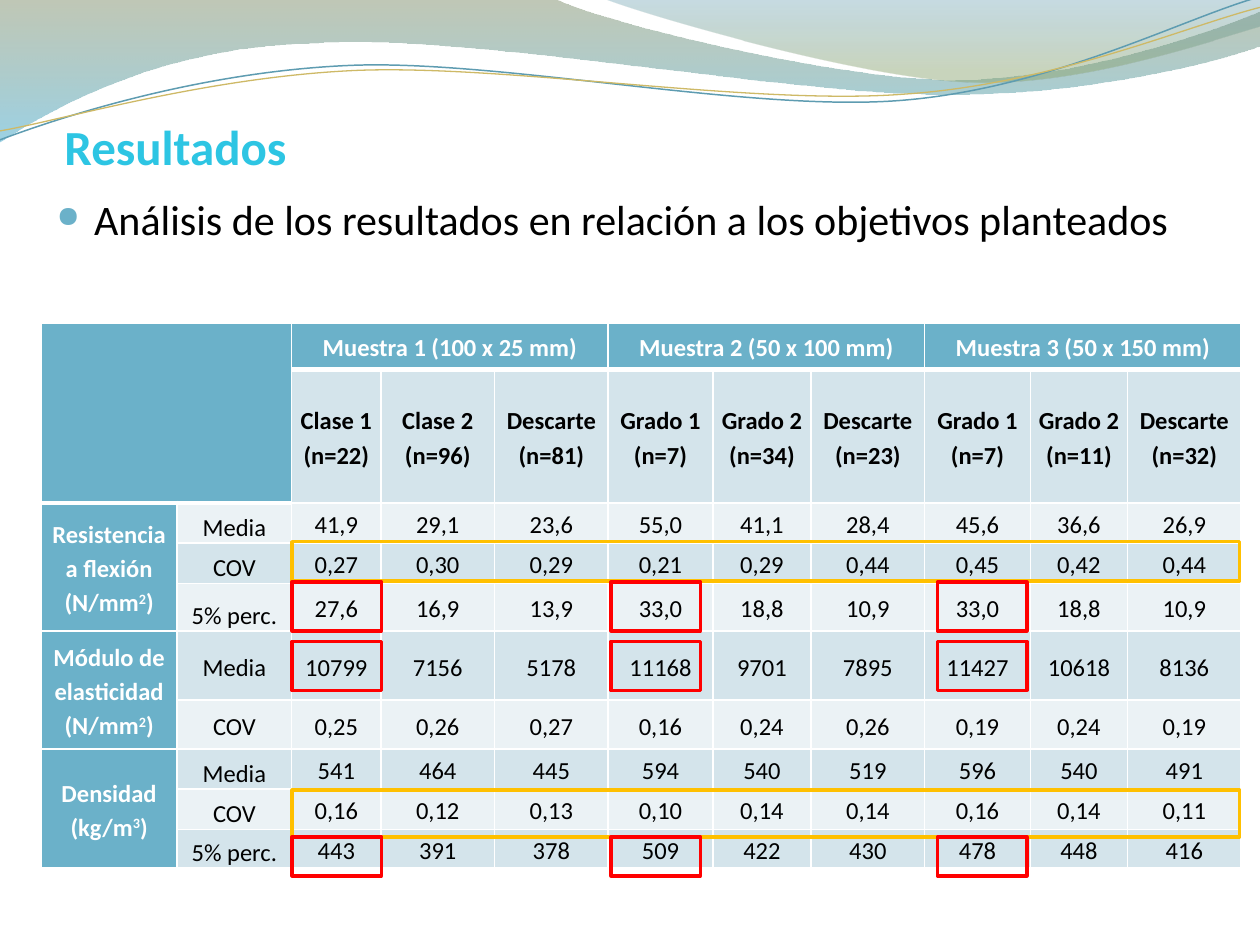
from lxml import etree
from pptx import Presentation
from pptx.dml.color import RGBColor
from pptx.enum.shapes import MSO_SHAPE
from pptx.enum.text import MSO_ANCHOR, MSO_AUTO_SIZE, PP_ALIGN
from pptx.oxml.ns import qn
from pptx.util import Cm, Pt

RECTANGLE = MSO_SHAPE.RECTANGLE
TOP, MIDDLE, BOTTOM = MSO_ANCHOR.TOP, MSO_ANCHOR.MIDDLE, MSO_ANCHOR.BOTTOM
LEFT, CENTER, JUSTIFY = PP_ALIGN.LEFT, PP_ALIGN.CENTER, PP_ALIGN.JUSTIFY
NO_AUTOFIT = MSO_AUTO_SIZE.NONE

THEME = {
    "font": "Calibri", "title_size": 28, "body_size": 24, "table_size": 14,
    "title": "2DC5E3", "text": "000000", "white": "FFFFFF", "accent": "6BB1C9",
    "band_dark": "D4E4EB", "band_light": "EBF2F5",
    "variation": "FFC000", "highlight": "FF0000",
}

# Content
TITLE = "Resultados"
BULLET = "Análisis de los resultados en relación a los objetivos planteados"
SAMPLES = [
    ("Muestra 1 (100 x 25 mm)", ["Clase 1 (n=22)", "Clase 2 (n=96)", "Descarte (n=81)"]),
    ("Muestra 2 (50 x 100 mm)", ["Grado 1 (n=7)", "Grado 2 (n=34)", "Descarte (n=23)"]),
    ("Muestra 3 (50 x 150 mm)", ["Grado 1 (n=7)", "Grado 2 (n=11)", "Descarte (n=32)"]),
]
# Property (text, exponent, text), anchor of the statistic names, statistics
PROPERTIES = [
    (("Resistencia a flexión (N/mm", "2", ")"), BOTTOM, [
        ("Media", "41,9 29,1 23,6 55,0 41,1 28,4 45,6 36,6 26,9"),
        ("COV", "0,27 0,30 0,29 0,21 0,29 0,44 0,45 0,42 0,44"),
        ("5% perc.", "27,6 16,9 13,9 33,0 18,8 10,9 33,0 18,8 10,9")]),
    (("Módulo de elasticidad (N/mm", "2", ")"), MIDDLE, [
        ("Media", "10799 7156 5178 11168 9701 7895 11427 10618 8136"),
        ("COV", "0,25 0,26 0,27 0,16 0,24 0,26 0,19 0,24 0,19")]),
    (("Densidad (kg/m", "3", ")"), BOTTOM, [
        ("Media", "541 464 445 594 540 519 596 540 491"),
        ("COV", "0,16 0,12 0,13 0,10 0,14 0,14 0,16 0,14 0,11"),
        ("5% perc.", "443 391 378 509 422 430 478 448 416")]),
]

# Measures in centimetres
TABLE_LEFT, TABLE_TOP = 0.83, 6.51
COLUMN_WIDTHS = [2.74, 2.31, 1.8, 2.29, 2.29, 2.11, 1.98, 2.29, 2.13, 1.96, 2.29]
ROW_HEIGHTS = [0.94, 2.69, 0.81, 0.81, 0.96, 1.39, 0.99, 0.81, 0.81, 0.78]
FRAME_LEFTS, FRAME_WIDTH = [5.89, 12.32, 18.9], 1.8
FRAME_ROWS = [(11.73, 0.99), (12.93, 0.99), (16.87, 0.79)]
VARIATION_ROWS = [(15.93, 0.94), (10.92, 0.79)]
VARIATION_WIDTH = 19.1

# Waves: a start point, then lines (2 numbers) and Bézier curves (6 numbers)
BANDS = [
    ([(0, 0), (11.18, -0.03), (12.09, 0.43, 16.87, 1.6, 19.25, 1.6),
      (21.67, 1.6, 24.33, 0.66, 25.4, 0.23), (25.43, 0.91),
      (24.97, 1.12, 22.1, 1.93, 18.95, 1.9), (15.8, 1.9, 9.7, 0.71, 6.53, 0.86),
      (3.28, 0.91, 1.17, 2.11, -0.03, 2.87), (0, 0)],
     [(0, "74855E", 45), (1, "4AACCE", 55)]),
    ([(12.17, -0.03), (12.93, 0.28, 17.32, 1.57, 19.53, 1.65),
      (21.74, 1.75, 24.41, 0.81, 25.4, 0.53), (25.4, 0), (12.17, -0.03)],
     [(0, "45889F", 30), (0.8, "8AA36D", 45)]),
]
STRANDS = [
    ([(0, 2.82), (1.22, 2.36, 4.01, 1.45, 7.04, 1.32),
      (10.03, 1.19, 15.06, 2.26, 18.11, 2.03),
      (21.16, 1.8, 23.83, 0.38, 25.35, -0.05)], "5E9CB1", 0.85),
    ([(0, 2.64), (1.19, 2.44, 4.17, 1.55, 7.19, 1.42),
      (10.24, 1.3, 15.16, 2.13, 18.21, 1.9),
      (21.23, 1.7, 23.9, 0.53, 25.4, 0.15)], "CEB966", 0.75),
]


def color(name):
    return RGBColor.from_string(THEME.get(name, name))


def style_font(font, size, color_name, bold=False):
    font.name, font.size, font.bold = THEME["font"], Pt(THEME[size]), bold
    font.color.rgb = color(color_name)


def set_frame(frame, anchor, margins):
    frame.word_wrap, frame.auto_size, frame.vertical_anchor = True, NO_AUTOFIT, anchor
    (frame.margin_left, frame.margin_top,
     frame.margin_right, frame.margin_bottom) = [Cm(margin) for margin in margins]


def add_wave(slide, segments, close):
    start, *rest = segments
    points = [(Cm(segment[index]), Cm(segment[index + 1]))
              for segment in rest for index in range(0, len(segment), 2)]
    builder = slide.shapes.build_freeform(Cm(start[0]), Cm(start[1]))
    builder.add_line_segments(points, close=close)
    shape = builder.convert_to_shape()
    shape.shadow.inherit = False
    # Join each three points of a curve into one Bézier segment
    lines = iter(list(shape._element.spPr.iter(qn("a:lnTo"))))
    for segment in rest:
        first = next(lines)
        if len(segment) == 6:
            curve = etree.Element(qn("a:cubicBezTo"))
            first.addprevious(curve)
            for line in (first, next(lines), next(lines)):
                curve.append(line[0])
                line.getparent().remove(line)
    return shape


def add_waves(slide):
    for segments, stops in BANDS:
        shape = add_wave(slide, segments, True)
        shape.line.fill.background()
        shape.fill.gradient()
        shape.fill.gradient_angle = 270
        for stop, (position, stop_color, _) in zip(shape.fill.gradient_stops, stops):
            stop.position, stop.color.rgb = position, color(stop_color)
        for element, stop in zip(shape._element.spPr.iter(qn("a:srgbClr")), stops):
            etree.SubElement(element, qn("a:alpha"), val=str(stop[2] * 1000))
    for segments, line_color, width in STRANDS:
        shape = add_wave(slide, segments, False)
        shape.fill.background()
        shape.line.color.rgb, shape.line.width = color(line_color), Pt(width)


def add_heading(slide):
    title = slide.shapes.title
    title.left, title.top, title.width, title.height = Cm(1.3), Cm(2.13), Cm(22.86), Cm(1.4)
    set_frame(title.text_frame, BOTTOM, (0, 0.13, 0, 0))
    title.text_frame.text = TITLE
    paragraph = title.text_frame.paragraphs[0]
    paragraph.alignment = LEFT
    style_font(paragraph.runs[0].font, "title_size", "title", True)

    body = slide.shapes.add_textbox(Cm(0.89), Cm(2.51), Cm(23.24), Cm(16))
    set_frame(body.text_frame, TOP, (0.25, 0.89, 0.25, 0.13))
    body.text_frame.text = BULLET
    paragraph = body.text_frame.paragraphs[0]
    paragraph.alignment, paragraph.line_spacing = JUSTIFY, 1.5
    properties = paragraph._p.get_or_add_pPr()
    properties.set("marL", str(Cm(0.76)))
    properties.set("indent", str(-Cm(0.76)))
    bullet_color = etree.SubElement(properties, qn("a:buClr"))
    etree.SubElement(bullet_color, qn("a:srgbClr"), val=THEME["accent"])
    etree.SubElement(properties, qn("a:buSzPct"), val="70000")
    etree.SubElement(properties, qn("a:buChar"), char="●")
    style_font(paragraph.runs[0].font, "body_size", "text")


def write_cell(cell, parts, color_name="text", bold=False, anchor=MIDDLE):
    cell.vertical_anchor = anchor
    paragraph = cell.text_frame.paragraphs[0]
    paragraph.alignment, paragraph.line_spacing = CENTER, 1.15
    for index, part in enumerate(parts):
        run = paragraph.add_run()
        run.text = part
        style_font(run.font, "table_size", color_name, bold)
        if index == 1:
            run._r.get_or_add_rPr().set("baseline", "30000")


def format_cell(cell, row, column):
    cell.margin_left = cell.margin_right = Cm(0.17)
    cell.margin_top = cell.margin_bottom = 0
    label = column < 2
    thick = {"a:lnT": row == (2 if label else 1), "a:lnB": row == 0 or (row == 1 and label)}
    for tag in ("a:lnL", "a:lnR", "a:lnT", "a:lnB"):
        width = Pt(3 if thick.get(tag) else 1)
        border = etree.SubElement(cell._tc.get_or_add_tcPr(), qn(tag), w=str(width))
        fill = etree.SubElement(border, qn("a:solidFill"))
        etree.SubElement(fill, qn("a:srgbClr"), val=THEME["white"])
    header = row == 0 or column == 0 or (row == 1 and label)
    cell.fill.solid()
    cell.fill.fore_color.rgb = color(
        "accent" if header else "band_dark" if row % 2 else "band_light")


def add_results_table(slide):
    table = slide.shapes.add_table(
        len(ROW_HEIGHTS), len(COLUMN_WIDTHS), Cm(TABLE_LEFT), Cm(TABLE_TOP),
        Cm(sum(COLUMN_WIDTHS)), Cm(sum(ROW_HEIGHTS))).table
    table.first_row = table.horz_banding = False
    for column, width in zip(table.columns, COLUMN_WIDTHS):
        column.width = Cm(width)
    for row, height in zip(table.rows, ROW_HEIGHTS):
        row.height = Cm(height)
    for row in range(len(ROW_HEIGHTS)):
        for column in range(len(COLUMN_WIDTHS)):
            format_cell(table.cell(row, column), row, column)

    # Header rows
    table.cell(0, 0).merge(table.cell(1, 1))
    for index, (sample, grades) in enumerate(SAMPLES):
        first = 2 + 3 * index
        table.cell(0, first).merge(table.cell(0, first + 2))
        write_cell(table.cell(0, first), [sample], "white", True)
        for offset, grade in enumerate(grades):
            write_cell(table.cell(1, first + offset), [grade], bold=True)

    # Property groups
    row = 2
    for name, anchor, statistics in PROPERTIES:
        table.cell(row, 0).merge(table.cell(row + len(statistics) - 1, 0))
        write_cell(table.cell(row, 0), name, "white", True)
        for statistic, values in statistics:
            write_cell(table.cell(row, 1), [statistic], anchor=anchor)
            for column, value in enumerate(values.split(), start=2):
                write_cell(table.cell(row, column), [value])
            row += 1


def add_frames(slide):
    frames = [(FRAME_LEFTS[0], top, VARIATION_WIDTH, height, "variation")
              for top, height in VARIATION_ROWS]
    frames += [(left, top, FRAME_WIDTH, height, "highlight")
               for left in FRAME_LEFTS for top, height in FRAME_ROWS]
    for *box, line_color in frames:
        shape = slide.shapes.add_shape(RECTANGLE, *[Cm(length) for length in box])
        shape.shadow.inherit = False
        shape.fill.background()
        shape.line.color.rgb, shape.line.width = color(line_color), Pt(2)


def main():
    presentation = Presentation()
    presentation.slide_width, presentation.slide_height = Cm(25.4), Cm(19.05)
    slide = presentation.slides.add_slide(presentation.slide_layouts[5])
    add_waves(slide)
    add_heading(slide)
    add_results_table(slide)
    add_frames(slide)
    presentation.save("out.pptx")


if __name__ == "__main__":
    main()
